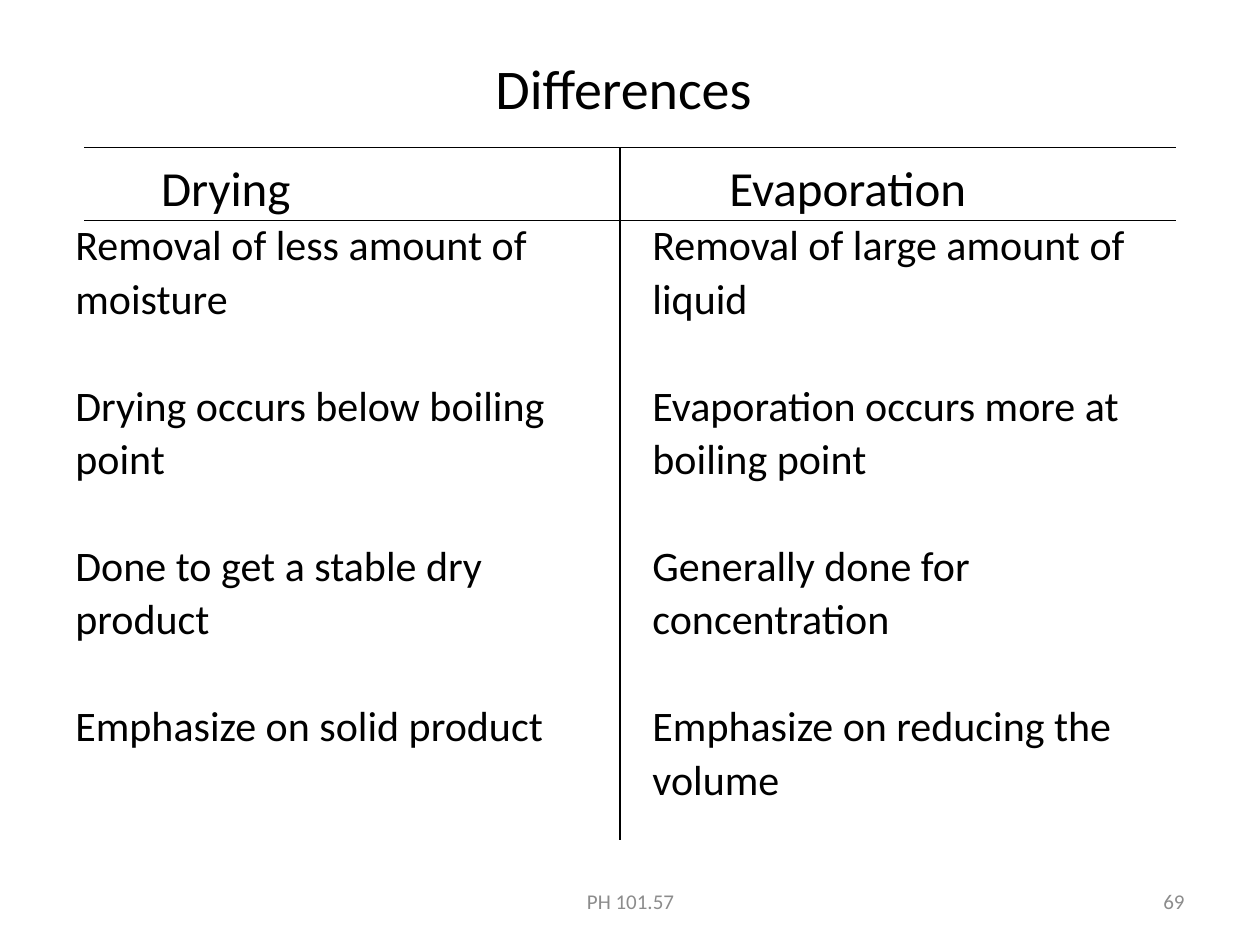
from lxml import etree
from pptx import Presentation
from pptx.dml.color import RGBColor
from pptx.enum.shapes import MSO_CONNECTOR
from pptx.enum.text import MSO_ANCHOR, PP_ALIGN
from pptx.oxml.ns import qn
from pptx.util import Inches, Pt

STRAIGHT = MSO_CONNECTOR.STRAIGHT
TOP, MIDDLE = MSO_ANCHOR.TOP, MSO_ANCHOR.MIDDLE
LEFT, CENTER, RIGHT = PP_ALIGN.LEFT, PP_ALIGN.CENTER, PP_ALIGN.RIGHT

COLORS = {"background": "FFFFFF", "text": "000000", "footer": "8C8C8C", "rule": "000000"}
FONT = "Calibri"
WIDTH, HEIGHT = 10, 7.5

# Grid: two columns between equal margins
MARGIN, GUTTER = 0.5, 0.16
COLUMN = (WIDTH - 2 * MARGIN - GUTTER) / 2
BODY_TOP, BODY_HEIGHT = 1.25, 5.75
LINE_GAP, ITEM_GAP = 4.5, 35.3

# Heading, heading indent, items as lists of lines
COMPARISON = [
    ("Drying", 0.68, [
        ["Removal of less amount of", "moisture"],
        ["Drying occurs below boiling", "point"],
        ["Done to get a stable dry", "product"],
        ["Emphasize on solid product"],
    ]),
    ("Evaporation", 0.61, [
        ["Removal of large amount of", "liquid"],
        ["Evaporation occurs more at", "boiling point"],
        ["Generally done for", "concentration"],
        ["Emphasize on reducing the", "volume"],
    ]),
]


def rgb(name):
    return RGBColor.from_string(COLORS[name])


def add_frame(s, left, top, width, height, anchor):
    box = s.shapes.add_textbox(Inches(left), Inches(top), Inches(width), Inches(height))
    tf = box.text_frame
    tf.word_wrap = True
    tf.vertical_anchor = anchor
    return tf


def write(p, text, size, color="text", align=LEFT):
    p.text = text
    p.alignment = align
    for r in p.runs:
        r.font.name = FONT
        r.font.size = Pt(size)
        r.font.color.rgb = rgb(color)


def add_label(s, text, left, top, width, height, size, color, align):
    tf = add_frame(s, left, top, width, height, MIDDLE)
    write(tf.paragraphs[0], text, size, color, align)


def add_column(s, index, heading, indent, items):
    left = MARGIN + index * (COLUMN + GUTTER)
    tf = add_frame(s, left, BODY_TOP, COLUMN, BODY_HEIGHT, TOP)
    p = tf.paragraphs[0]
    write(p, heading, 28)
    p.line_spacing = 0.9
    p._p.get_or_add_pPr().set("indent", str(Inches(indent)))
    for i, lines in enumerate(items):
        for j, line in enumerate(lines):
            p = tf.add_paragraph()
            write(p, line, 24)
            p.line_spacing = 0.9
            p.space_before = Pt(ITEM_GAP if i and not j else LINE_GAP)


def add_rule(s, x1, y1, x2, y2):
    line = s.shapes.add_connector(STRAIGHT, Inches(x1), Inches(y1), Inches(x2), Inches(y2))
    line.line.color.rgb = rgb("rule")
    line.line.width = Pt(0.75)
    etree.SubElement(line._element.spPr, qn("a:effectLst"))


def main():
    prs = Presentation()
    prs.slide_width, prs.slide_height = Inches(WIDTH), Inches(HEIGHT)
    s = prs.slides.add_slide(prs.slide_layouts[6])
    s.background.fill.solid()
    s.background.fill.fore_color.rgb = rgb("background")

    # Footer and slide number
    add_label(s, "PH 101.57", 3.42, 6.95, 3.17, 0.4, 12, "footer", CENTER)
    add_label(s, "69", 7.17, 6.95, 2.33, 0.4, 12, "footer", RIGHT)

    # Title
    add_label(s, "Differences ", MARGIN, 0.3, WIDTH - 2 * MARGIN, 0.78, 32, "text", CENTER)

    # Comparison columns
    for index, (heading, indent, items) in enumerate(COMPARISON):
        add_column(s, index, heading, indent, items)

    # Rules: column divider, then the lines around the headings
    divider = MARGIN + COLUMN
    add_rule(s, divider, 1.17, divider, 6.67)
    for y in (1.75, 1.17):
        add_rule(s, 0.67, y, WIDTH - 0.67, y)

    prs.save("out.pptx")


if __name__ == "__main__":
    main()
